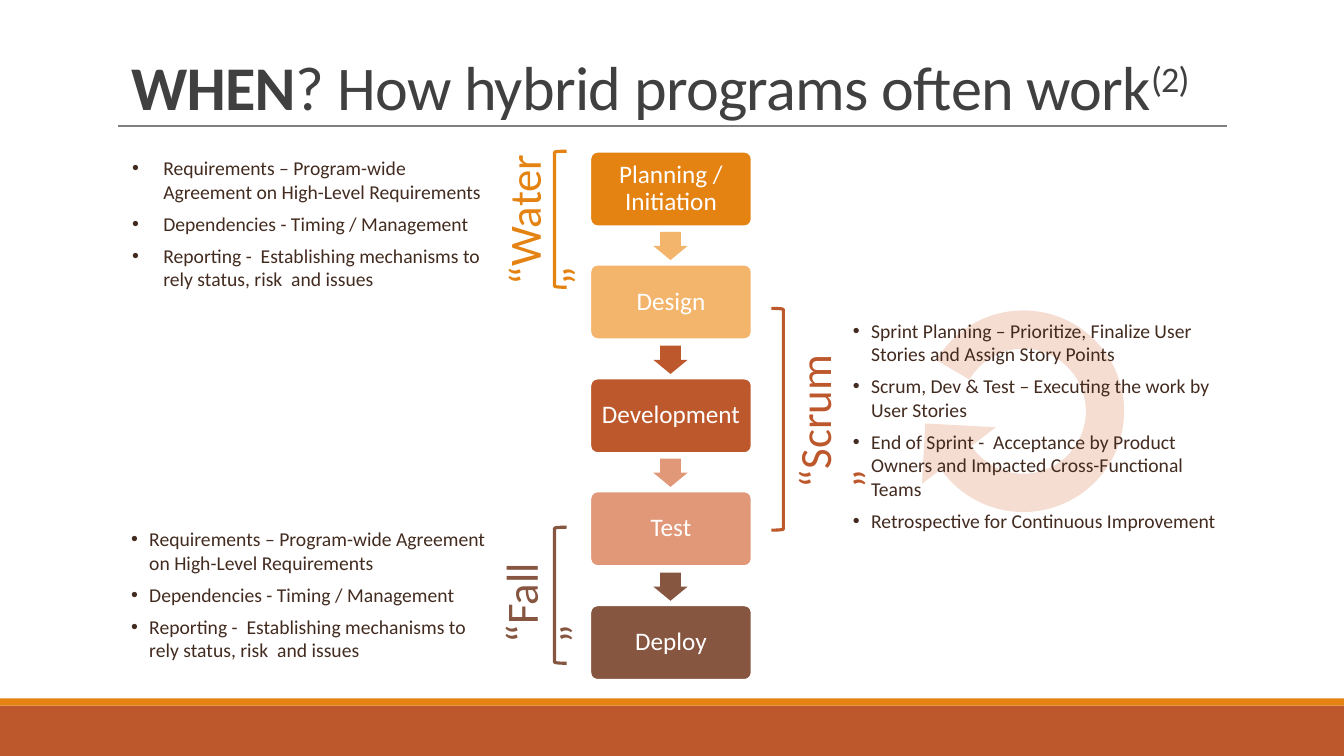
from dataclasses import dataclass

from lxml.etree import SubElement
from pptx import Presentation
from pptx.dml.color import RGBColor
from pptx.enum.shapes import MSO_CONNECTOR, MSO_SHAPE
from pptx.enum.text import MSO_ANCHOR, MSO_AUTO_SIZE, PP_ALIGN
from pptx.oxml.ns import qn
from pptx.util import Emu, Pt

PX = 9144
FONT = "Calibri"
HUES = {
    "white": "FFFFFF", "title": "404040", "text": "432B20", "rule": "808080",
    "orange": "E48312", "peach": "F3B56C", "rust": "BD582C",
    "salmon": "E09878", "brown": "865640", "blush": "F5DDD2",
}


@dataclass(frozen=True)
class Box:
    x: int
    y: int
    w: int
    h: int


@dataclass(frozen=True)
class Step:
    text: str
    hue: str


@dataclass(frozen=True)
class Phase:
    text: str
    hue: str
    label: Box
    bracket: Box
    flip: bool = False


@dataclass(frozen=True)
class Notes:
    slot: int
    box: Box
    indent: int
    items: tuple[str, ...]
    filled: bool = True


STEPS = (
    Step("Planning / Initiation", "orange"),
    Step("Design", "peach"),
    Step("Development", "rust"),
    Step("Test", "salmon"),
    Step("Deploy", "brown"),
)
PHASES = (
    Phase("“Water”", "orange", Box(487, 123, 74, 170), Box(550, 150, 12, 135)),
    Phase("“Fall”", "brown", Box(484, 534, 74, 114), Box(550, 523, 12, 135)),
    Phase("“Scrum”", "rust", Box(775, 333, 74, 161), Box(765, 306, 12, 220), True),
)
PROGRAM = (
    "Requirements – Program-wide Agreement on High-Level Requirements",
    "Dependencies - Timing / Management",
    "Reporting -  Establishing mechanisms to rely status, risk  and issues",
)
SPRINT = (
    "Sprint Planning – Prioritize, Finalize User Stories and Assign Story Points",
    "Scrum, Dev & Test – Executing the work by User Stories",
    "End of Sprint -  Acceptance by Product Owners and Impacted Cross-Functional Teams",
    "Retrospective for Continuous Improvement",
)
LISTS = (
    Notes(1, Box(121, 150, 384, 270), 31, PROGRAM),
    Notes(2, Box(120, 518, 386, 153), 18, PROGRAM),
    Notes(3, Box(836, 311, 401, 223), 18, SPRINT, False),
)
TITLE = (("WHEN", True, 0), ("? How hybrid programs often work", False, 0), ("(2)", False, 30000))


def px(n: int) -> Emu:
    return Emu(n * PX)


def tint(hue: str) -> RGBColor:
    return RGBColor.from_string(HUES[hue])


def place(shape, box: Box) -> None:
    shape.left, shape.top = px(box.x), px(box.y)
    shape.width, shape.height = px(box.w), px(box.h)


def style(run, size: float, hue: str, bold: bool = False) -> None:
    font = run.font
    font.name, font.size, font.bold = FONT, Pt(size), bold
    font.color.rgb = tint(hue)


def paint(shape, fill: str = "", line: str = "", width: float = 0) -> None:
    if fill:
        shape.fill.solid()
        shape.fill.fore_color.rgb = tint(fill)
    else:
        shape.fill.background()
    if line:
        shape.line.color.rgb = tint(line)
        shape.line.width = Pt(width)
    else:
        shape.line.fill.background()


def draw(slide, kind: MSO_SHAPE, box: Box, fill: str = "", line: str = "", width: float = 0):
    shape = slide.shapes.add_shape(kind, px(box.x), px(box.y), px(box.w), px(box.h))
    shape.shadow.inherit = False
    paint(shape, fill, line, width)
    return shape


def flip(shape, axis: str) -> None:
    shape._element.spPr.find(qn("a:xfrm")).set(axis, "1")


def add_title(slide) -> None:
    title = slide.shapes.title
    place(title, Box(120, 47, 1100, 88))
    frame = title.text_frame
    frame.auto_size = MSO_AUTO_SIZE.NONE
    frame.vertical_anchor = MSO_ANCHOR.MIDDLE
    para = frame.paragraphs[0]
    para.alignment, para.line_spacing = PP_ALIGN.LEFT, 0.85
    for text, bold, base in TITLE:
        run = para.add_run()
        run.text = text
        style(run, 44.4, "title", bold)
        props = run._r.get_or_add_rPr()
        props.set("spc", "-50")
        if base:
            props.set("baseline", str(base))


def add_list(slide, notes: Notes) -> None:
    body = slide.placeholders[notes.slot]
    place(body, notes.box)
    if notes.filled:
        paint(body, "white", "white", 1.25)
    frame = body.text_frame
    frame.auto_size = MSO_AUTO_SIZE.NONE
    frame.vertical_anchor = MSO_ANCHOR.TOP
    frame.text = "\n".join(notes.items)
    for para in frame.paragraphs:
        para.space_before, para.space_after = Pt(0), Pt(6)
        style(para.runs[0], 14, "text")
        props = para._p.get_or_add_pPr()
        props.set("marL", str(px(notes.indent)))
        props.set("indent", str(-px(notes.indent)))
        SubElement(props, qn("a:buFont")).set("typeface", "Arial")
        SubElement(props, qn("a:buChar")).set("char", "•")


def add_step(slide, row: int, step: Step) -> None:
    drop = row * 225 // 2
    if row:
        arrow = draw(slide, MSO_SHAPE.RIGHT_ARROW, Box(651, 115 + drop, 28, 34), step.hue)
        arrow.rotation = 90
        arrow.adjustments[0] = 0.6
    card = draw(slide, MSO_SHAPE.ROUNDED_RECTANGLE, Box(585, 150 + drop, 161, 75), step.hue, "white", 2)
    card.adjustments[0] = 0.1
    frame = card.text_frame
    frame.margin_left = frame.margin_right = px(9)
    frame.margin_top = frame.margin_bottom = px(9)
    frame.word_wrap = True
    frame.vertical_anchor = MSO_ANCHOR.MIDDLE
    frame.text = step.text
    para = frame.paragraphs[0]
    para.alignment, para.line_spacing = PP_ALIGN.CENTER, 0.9
    style(para.runs[0], 18, "white")


def add_phase(slide, phase: Phase) -> None:
    bracket = draw(slide, MSO_SHAPE.LEFT_BRACKET, phase.bracket, line=phase.hue, width=2.25)
    if phase.flip:
        flip(bracket, "flipH")
    box = phase.label
    label = slide.shapes.add_textbox(px(box.x), px(box.y), px(box.w), px(box.h))
    frame = label.text_frame
    frame.word_wrap = True
    frame.auto_size = MSO_AUTO_SIZE.SHAPE_TO_FIT_TEXT
    frame._txBody.bodyPr.set("vert", "vert270")
    frame.text = phase.text
    style(frame.paragraphs[0].runs[0], 32, phase.hue)


def add_cycle(slide) -> None:
    arc = draw(slide, MSO_SHAPE.BLOCK_ARC, Box(915, 308, 200, 200), "blush")
    for i, value in enumerate((125.6, 89.74, 0.19)):
        arc.adjustments[i] = value
    flip(arc, "flipV")
    tip = draw(slide, MSO_SHAPE.RIGHT_TRIANGLE, Box(921, 417, 60, 70), "blush")
    tip.rotation = 93.1
    for shape in (tip, arc):
        slide.shapes._spTree.insert(2, shape._element)


def main() -> None:
    """Build the hybrid program slide."""
    deck = Presentation()
    deck.slide_width, deck.slide_height = px(1333), px(750)
    slide = deck.slides.add_slide(deck.slide_layouts.get_by_name("Comparison"))
    spare = slide.placeholders[4]._element
    spare.getparent().remove(spare)
    draw(slide, MSO_SHAPE.RECTANGLE, Box(0, 700, 1333, 50), "rust")
    draw(slide, MSO_SHAPE.RECTANGLE, Box(0, 693, 1333, 7), "orange")
    rule = slide.shapes.add_connector(MSO_CONNECTOR.STRAIGHT, px(117), px(125), px(1217), px(125))
    rule.line.color.rgb, rule.line.width = tint("rule"), Pt(1.5)
    SubElement(rule._element.spPr, qn("a:effectLst"))
    add_title(slide)
    for notes in LISTS:
        add_list(slide, notes)
    add_cycle(slide)
    for row, step in enumerate(STEPS):
        add_step(slide, row, step)
    for phase in PHASES:
        add_phase(slide, phase)
    deck.save("out.pptx")


if __name__ == "__main__":
    main()
